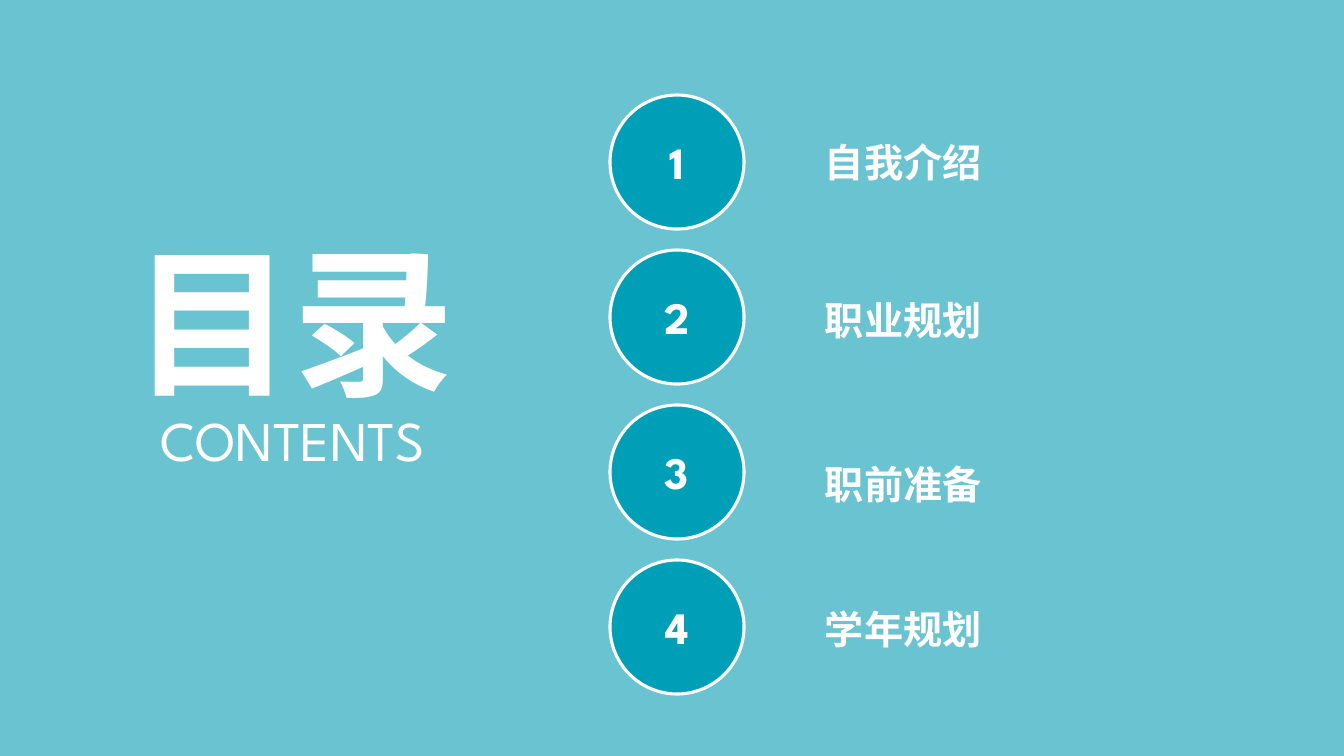
from dataclasses import dataclass

from lxml import etree
from pptx import Presentation
from pptx import util as u
from pptx.dml.color import RGBColor
from pptx.enum import shapes, text
from pptx.oxml.ns import qn


@dataclass(frozen=True)
class Theme:
    background: RGBColor = RGBColor.from_string("6AC3D0")
    disc: RGBColor = RGBColor.from_string("009FB8")
    ink: RGBColor = RGBColor.from_string("FFFFFF")
    latin: str = "League Spartan"
    chinese: str = "Noto Sans CJK SC"
    title: int = 115
    subtitle: int = 40
    number: int = 32
    label: int = 28
    outline: float = 2.25


THEME = Theme()
PX_PER_INCH = 100.8
SLIDE = (1344, 756)

TITLE = ("目录", (120, 218, 346, 206))
SUBTITLE = ("CONTENTS", (140, 401, 305, 78))
# Chapter name and the top of its label
CHAPTERS = [
    ("自我介绍", 133),
    ("职业规划", 291),
    ("职前准备", 455),
    ("学年规划", 600),
]
DISC_LEFT, DISC_TOP, DISC_SIZE, DISC_PITCH = 610, 95, 134, 155
LABEL_LEFT, LABEL_WIDTH, LABEL_HEIGHT = 815, 236, 57


def px(*lengths):
    return [u.Emu(round(n * u.Inches(1) / PX_PER_INCH)) for n in lengths]


def write(frame, words, size, font, bold, align):
    paragraph = frame.paragraphs[0]
    paragraph.alignment = align
    run = paragraph.add_run()
    run.text = words
    run.font.size = u.Pt(size)
    run.font.name = font
    run.font.bold = bold
    run.font.color.rgb = THEME.ink
    latin = run.font._element.find(qn("a:latin"))
    east_asian = etree.Element(qn("a:ea"), typeface=font)
    latin.addnext(east_asian)


def add_text(slide, words, box, size, font, bold=True, wrap=False,
             align=text.PP_ALIGN.CENTER):
    frame = slide.shapes.add_textbox(*px(*box)).text_frame
    frame.word_wrap = wrap
    frame.auto_size = text.MSO_AUTO_SIZE.SHAPE_TO_FIT_TEXT
    write(frame, words, size, font, bold, align)


def add_disc(slide, number, top):
    disc = slide.shapes.add_shape(
        shapes.MSO_SHAPE.OVAL, *px(DISC_LEFT, top, DISC_SIZE, DISC_SIZE))
    disc.shadow.inherit = False
    disc.fill.solid()
    disc.fill.fore_color.rgb = THEME.disc
    disc.line.color.rgb = THEME.ink
    disc.line.width = u.Pt(THEME.outline)
    disc.text_frame.vertical_anchor = text.MSO_ANCHOR.MIDDLE
    write(disc.text_frame, str(number), THEME.number, THEME.latin, True,
          text.PP_ALIGN.CENTER)


def main():
    deck = Presentation()
    deck.slide_width, deck.slide_height = px(*SLIDE)
    slide = deck.slides.add_slide(deck.slide_layouts[6])
    slide.background.fill.solid()
    slide.background.fill.fore_color.rgb = THEME.background

    add_text(slide, *SUBTITLE, THEME.subtitle, THEME.latin, bold=False)
    for index, (chapter, label_top) in enumerate(CHAPTERS):
        label_box = (LABEL_LEFT, label_top, LABEL_WIDTH, LABEL_HEIGHT)
        add_text(slide, chapter, label_box, THEME.label, THEME.chinese,
                 wrap=True, align=text.PP_ALIGN.LEFT)
        add_disc(slide, index + 1, DISC_TOP + index * DISC_PITCH)
    add_text(slide, *TITLE, THEME.title, THEME.chinese)

    deck.save("out.pptx")


if __name__ == "__main__":
    main()
